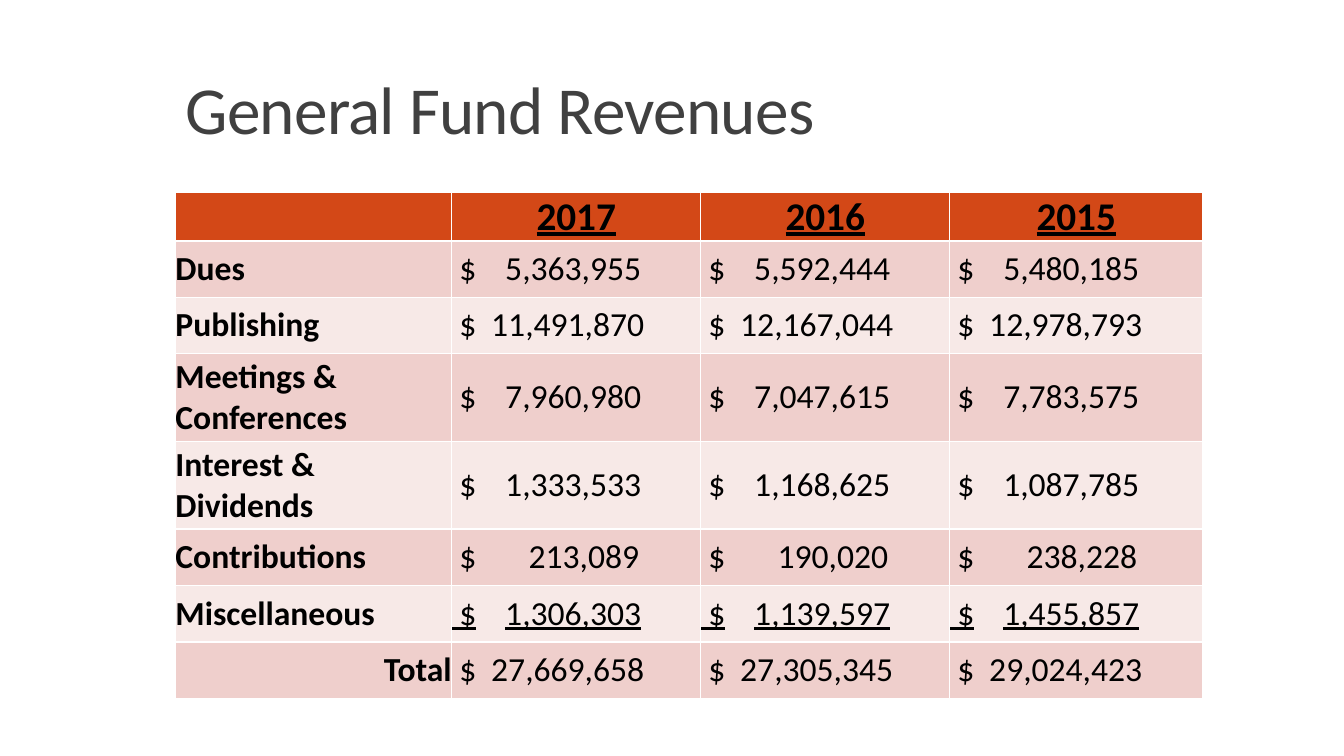
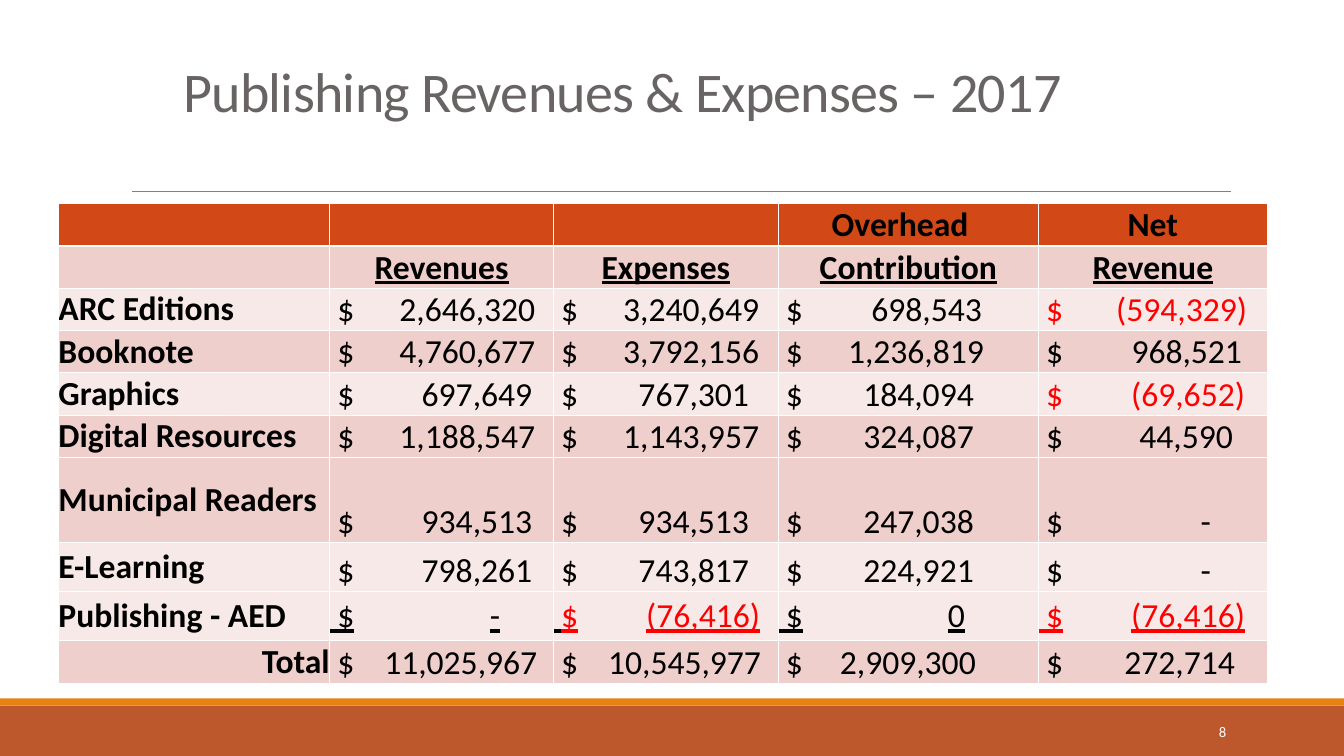
from lxml.etree import SubElement
from pptx import Presentation
from pptx.dml.color import RGBColor
from pptx.enum.shapes import MSO_CONNECTOR, MSO_SHAPE
from pptx.enum.text import MSO_ANCHOR, PP_ALIGN
from pptx.oxml.ns import qn
from pptx.util import Inches, Pt

COLOURS = {
    "white": "FFFFFF", "black": "000000", "negative": "FF0000",
    "header": "D34817", "dark": "EFCFCC", "light": "F7E9E7",
    "band": "BD582C", "stripe": "E48312", "rule": "808080",
    "title": "404040", "soft title": "696464",
}
FONT = "Calibri"
FILLS = {"h": "header", "d": "dark", "l": "light"}

# Each table row: label, values, where each value ends in its cell (inches)
# Underlined rows also say where each underline ends
revenues = {
    "title": "General Fund Revenues", "title colour": "title", "title size": 48,
    "title at": (1.74, 0.68, 10.84, 0.84),
    "table at": (1.74, 1.91), "columns": [2.74, 2.47, 2.47, 2.51],
    "heights": [0.48, 0.56, 0.56, 0.87, 0.87, 0.56, 0.56, 0.56],
    "fills": "hdldldld", "heading size": 28, "anchor": MSO_ANCHOR.MIDDLE,
    "headings": [["", "2017", "2016", "2015"]],
    "rows": [
        ("Dues", ["5,363,955", "5,592,444", "5,480,185"], [1.88] * 3),
        ("Publishing", ["11,491,870", "12,167,044", "12,978,793"], [1.91] * 3),
        ("Meetings & Conferences", ["7,960,980", "7,047,615", "7,783,575"], [1.88] * 3),
        ("Interest & Dividends", ["1,333,533", "1,168,625", "1,087,785"], [1.88] * 3),
        ("Contributions", ["213,089", "190,020", "238,228"], [1.86] * 3),
        ("Miscellaneous", ["1,306,303", "1,139,597", "1,455,857"], [1.88] * 3),
        ("Total", ["27,669,658", "27,305,345", "29,024,423"], [1.91] * 3),
    ],
    "underlined": {"Miscellaneous": [1.97] * 3},
}
publishing = {
    "title": "Publishing Revenues & Expenses – 2017",
    "title colour": "soft title", "title size": 40,
    "title at": (1.72, 0.36, 10.86, 0.92),
    "table at": (0.58, 2.02), "columns": [2.69, 2.22, 2.23, 2.58, 2.27],
    "heights": [0.42] * 6 + [0.84, 0.49, 0.49, 0.42],
    "fills": "hdldlddlld", "heading size": 24, "anchor": MSO_ANCHOR.BOTTOM,
    "headings": [["", "", "", "Overhead", "Net"],
                 ["", "Revenues", "Expenses", "Contribution", "Revenue"]],
    "rows": [
        ("ARC Editions", ["2,646,320", "3,240,649", "698,543", "(594,329)"],
         [2.04, 2.04, 2.02, 2.07]),
        ("Booknote", ["4,760,677", "3,792,156", "1,236,819", "968,521"],
         [2.04, 2.04, 2.04, 2.02]),
        ("Graphics", ["697,649", "767,301", "184,094", "(69,652)"],
         [2.01, 1.94, 1.94, 2.05]),
        ("Digital Resources", ["1,188,547", "1,143,957", "324,087", "44,590"],
         [2.04, 2.04, 1.94, 1.93]),
        ("Municipal Readers", ["934,513", "934,513", "247,038", "-"],
         [2.01, 1.94, 1.94, 1.71]),
        ("E-Learning", ["798,261", "743,817", "224,921", "-"],
         [2.01, 1.94, 1.94, 1.71]),
        ("Publishing - AED", ["-", "(76,416)", "0", "(76,416)"],
         [1.69, 2.05, 1.85, 2.05]),
        ("Total", ["11,025,967", "10,545,977", "2,909,300", "272,714"],
         [2.06, 2.06, 1.96, 1.95]),
    ],
    "underlined": {"Publishing - AED": [1.92, 2.12, 1.92, 2.07]},
}


def colour(name):
    return RGBColor.from_string(COLOURS[name])


def add_span(para, text, size, tint="black", bold=False, underline=False):
    span = para.add_run()
    span.text = text
    span.font.name = FONT
    span.font.size = Pt(size)
    span.font.color.rgb = colour(tint)
    span.font.bold = bold
    span.font.underline = underline
    return span


deck = Presentation()
deck.slide_width, deck.slide_height = Inches(13.33), Inches(7.5)

for content in (revenues, publishing):
    page = deck.slides.add_slide(deck.slide_layouts[6])

    # Footer bands, title rule and page number
    if content is publishing:
        for top, height, tint in ((7, 0.5, "band"), (6.93, 0.07, "stripe")):
            band = page.shapes.add_shape(
                MSO_SHAPE.RECTANGLE, 0, Inches(top), deck.slide_width, Inches(height))
            band.shadow.inherit = False
            band.fill.solid()
            band.fill.fore_color.rgb = colour(tint)
            band.line.fill.background()
        rule = page.shapes.add_connector(
            MSO_CONNECTOR.STRAIGHT, Inches(1.31), Inches(1.9), Inches(12.21), Inches(1.9))
        rule.line.color.rgb = colour("rule")
        rule.line.width = Pt(0.5)
        SubElement(rule._element.spPr, qn("a:effectLst"))
        box = page.shapes.add_textbox(Inches(10.83), Inches(7.06), Inches(1.43), Inches(0.4))
        box.text_frame.word_wrap = True
        box.text_frame.vertical_anchor = MSO_ANCHOR.MIDDLE
        para = box.text_frame.paragraphs[0]
        para.alignment = PP_ALIGN.RIGHT
        add_span(para, "8", 10.5, "white")

    # Title
    box = page.shapes.add_textbox(*[Inches(n) for n in content["title at"]])
    box.text_frame.word_wrap = True
    box.text_frame.vertical_anchor = MSO_ANCHOR.BOTTOM
    para = box.text_frame.paragraphs[0]
    para.line_spacing = 0.85
    span = add_span(para, content["title"], content["title size"], content["title colour"])
    span.font._element.set("spc", "-50")

    # Table grid
    columns, heights = content["columns"], content["heights"]
    left, top = content["table at"]
    table = page.shapes.add_table(
        len(heights), len(columns), Inches(left), Inches(top),
        Inches(sum(columns)), Inches(sum(heights))).table
    table.first_row = table.horz_banding = False
    for column, width in zip(table.columns, columns):
        column.width = Inches(width)
    for row, height, fill in zip(table.rows, heights, content["fills"]):
        row.height = Inches(height)
        for cell in row.cells:
            cell.margin_left = cell.margin_right = cell.margin_top = cell.margin_bottom = 0
            cell.vertical_anchor = MSO_ANCHOR.MIDDLE
            for side in ("lnL", "lnR", "lnT", "lnB"):
                thick = fill == "h" and side == "lnB"
                border = SubElement(cell._tc.get_or_add_tcPr(), qn("a:" + side),
                                    w=str(Pt(1.5 if thick else 1)))
                solid = SubElement(border, qn("a:solidFill"))
                SubElement(solid, qn("a:srgbClr"), val=COLOURS["white"])
            cell.fill.solid()
            cell.fill.fore_color.rgb = colour(FILLS[fill])

    # Column headings
    headings = content["headings"]
    for r, words in enumerate(headings):
        for c, word in enumerate(words):
            if not word:
                continue
            cell = table.cell(r, c)
            cell.vertical_anchor = MSO_ANCHOR.BOTTOM
            para = cell.text_frame.paragraphs[0]
            para.alignment = PP_ALIGN.CENTER
            if word == "Overhead":
                para.alignment = PP_ALIGN.LEFT
                cell.margin_left = Inches(0.53)
            add_span(para, word, content["heading size"], bold=True,
                     underline=r == len(headings) - 1)

    # Labels and amounts
    for r, (label, values, ends) in enumerate(content["rows"], len(headings)):
        para = table.cell(r, 0).text_frame.paragraphs[0]
        if label == "Total":
            para.alignment = PP_ALIGN.RIGHT
        add_span(para, label, 24, bold=True)
        line_ends = content["underlined"].get(label)
        for c, (value, end) in enumerate(zip(values, ends), 1):
            cell = table.cell(r, c)
            para = cell.text_frame.paragraphs[0]
            stops = [(end, "r")]
            text = "$\t" + value
            if line_ends:
                stops.append((line_ends[c - 1], "l"))
                text += "\t"
            else:
                cell.vertical_anchor = content["anchor"]
            tabs = SubElement(para._p.get_or_add_pPr(), qn("a:tabLst"))
            for position, side in stops:
                SubElement(tabs, qn("a:tab"), pos=str(Inches(position)), algn=side)
            tint = "negative" if value.startswith("(") else "black"
            lead = tint if c == len(values) else "black"
            add_span(para, " ", 24, lead, underline=bool(line_ends))
            add_span(para, text, 24, tint, underline=bool(line_ends))

deck.save("out.pptx")
